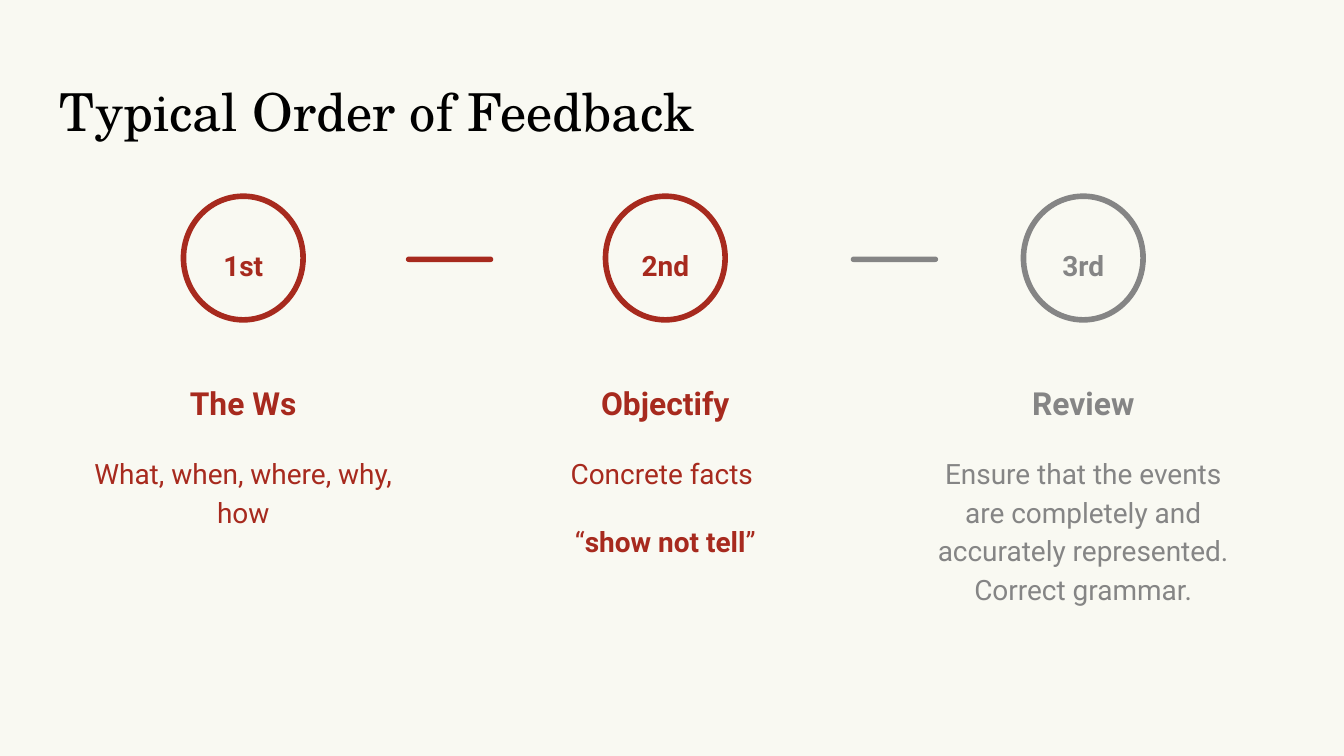
from dataclasses import dataclass

from pptx import Presentation
from pptx.dml.color import RGBColor
from pptx.enum.shapes import MSO_SHAPE
from pptx.enum.text import MSO_ANCHOR, PP_ALIGN
from pptx.shapes.group import GroupShape
from pptx.slide import Slide
from pptx.text.text import TextFrame
from pptx.util import Inches, Pt

OVAL, ROUNDED = MSO_SHAPE.OVAL, MSO_SHAPE.ROUNDED_RECTANGLE
TOP, BOTTOM = MSO_ANCHOR.TOP, MSO_ANCHOR.BOTTOM
LEFT, CENTER = PP_ALIGN.LEFT, PP_ALIGN.CENTER


@dataclass(frozen=True)
class Theme:
    background: str = "F9F9F2"
    ink: str = "000000"
    red: str = "A72A1E"
    gray: str = "858585"
    title_font: str = "TeX Gyre Schola"
    body_font: str = "Roboto"
    title_size: int = 28
    heading_size: int = 17
    body_size: int = 15
    ring_width: int = 3
    paragraph_gap: int = 16


@dataclass(frozen=True)
class Run:
    text: str
    bold: bool = False


@dataclass(frozen=True)
class Step:
    center: float
    ordinal: str
    heading: str
    body: list[list[Run]]
    color: str
    body_width: float = 2.55


@dataclass(frozen=True)
class Dash:
    left: float
    color: str


THEME = Theme()
STEPS = [
    Step(1.81, "1st", "The Ws", [[Run("What, when, where, why, how")]], THEME.red, 2.62),
    Step(4.95, "2nd", "Objectify",
         [[Run("Concrete facts ")], [Run("“"), Run("show not tell", True), Run("”")]],
         THEME.red),
    Step(8.06, "3rd", "Review",
         [[Run("Ensure that the events are completely and accurately represented. "
               "Correct grammar.")]],
         THEME.gray),
]
DASHES = [Dash(3.02, THEME.red), Dash(6.33, THEME.gray)]


def write_text(tf: TextFrame, paragraphs: list[list[Run]], *, size: int, color: str,
               font: str = THEME.body_font, align: PP_ALIGN = CENTER,
               anchor: MSO_ANCHOR = TOP, spacing: float = 1.15) -> None:
    tf.word_wrap = True
    tf.vertical_anchor = anchor
    tf.margin_left = tf.margin_right = tf.margin_top = tf.margin_bottom = Inches(0.1)
    for i, runs in enumerate(paragraphs):
        p = tf.add_paragraph() if i else tf.paragraphs[0]
        p.alignment = align
        p.line_spacing = spacing
        p.space_before = Pt(THEME.paragraph_gap if i else 0)
        p.space_after = Pt(0)
        for run in runs:
            r = p.add_run()
            r.text = run.text
            r.font.name = font
            r.font.size = Pt(size)
            r.font.bold = run.bold
            r.font.color.rgb = RGBColor.from_string(color)


def add_centered_box(group: GroupShape, center: float, top: float,
                     width: float, height: float) -> TextFrame:
    box = group.shapes.add_textbox(Inches(center - width / 2), Inches(top),
                                   Inches(width), Inches(height))
    return box.text_frame


def add_step(s: Slide, step: Step) -> None:
    group = s.shapes.add_group_shape()
    ring = group.shapes.add_shape(OVAL, Inches(step.center - 0.89 / 2), Inches(1.46),
                                  Inches(0.89), Inches(0.92))
    ring.shadow.inherit = False
    ring.fill.background()
    ring.line.color.rgb = RGBColor.from_string(step.color)
    ring.line.width = Pt(THEME.ring_width)

    write_text(add_centered_box(group, step.center, 1.71, 0.65, 0.5),
               [[Run(step.ordinal, True)]], size=THEME.body_size, color=step.color)
    write_text(add_centered_box(group, step.center, 2.55, 2.55, 0.69),
               [[Run(step.heading, True)]], size=THEME.heading_size,
               color=step.color, anchor=BOTTOM)
    write_text(add_centered_box(group, step.center, 3.26, step.body_width, 1.14),
               step.body, size=THEME.body_size, color=step.color)


def add_dash(s: Slide, dash: Dash) -> None:
    sp = s.shapes.add_shape(ROUNDED, Inches(dash.left), Inches(1.91),
                            Inches(0.65), Inches(0.04))
    sp.adjustments[0] = 0.5
    sp.shadow.inherit = False
    sp.fill.solid()
    sp.fill.fore_color.rgb = RGBColor.from_string(dash.color)
    sp.line.fill.background()


def add_title(s: Slide, text: str) -> None:
    title = s.shapes.title
    title.left, title.top = Inches(0.34), Inches(0.49)
    title.width, title.height = Inches(9.32), Inches(0.63)
    write_text(title.text_frame, [[Run(text)]], size=THEME.title_size, color=THEME.ink,
               font=THEME.title_font, align=LEFT, spacing=1.0)


def main() -> None:
    prs = Presentation()
    prs.slide_width = Inches(10)
    prs.slide_height = prs.slide_width * 9 // 16
    s = prs.slides.add_slide(prs.slide_layouts[5])
    s.background.fill.solid()
    s.background.fill.fore_color.rgb = RGBColor.from_string(THEME.background)
    add_title(s, "Typical Order of Feedback")
    for step in STEPS:
        add_step(s, step)
    for dash in DASHES:
        add_dash(s, dash)
    prs.save("out.pptx")


if __name__ == "__main__":
    main()
